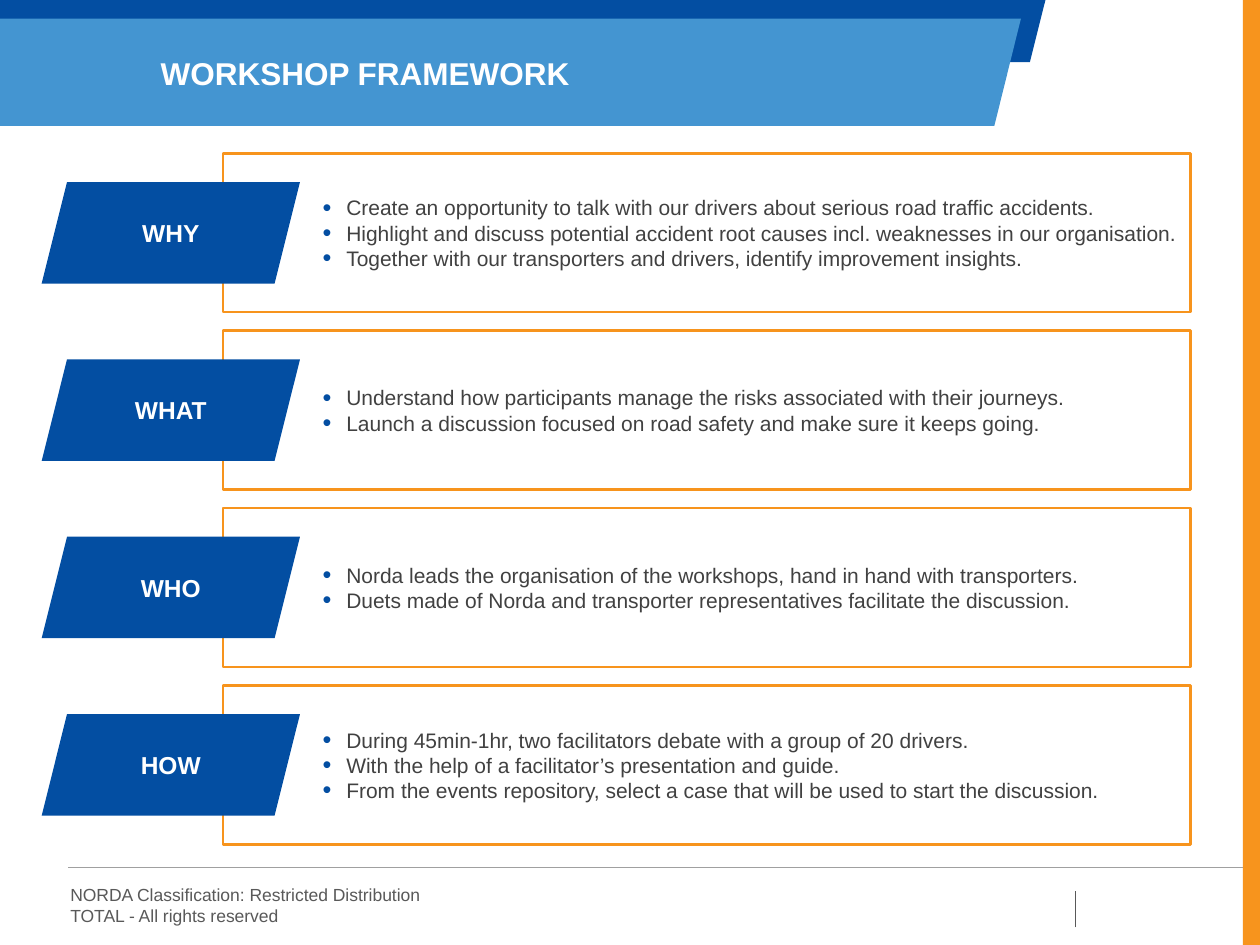
"""Build the workshop framework slide."""
import pptx
import pptx.dml.color
import pptx.enum.shapes
import pptx.enum.text
import pptx.util
from lxml import etree

Pt = pptx.util.Pt
SHAPES = pptx.enum.shapes.MSO_SHAPE
ANCHORS = pptx.enum.text.MSO_ANCHOR
ALIGNMENTS = pptx.enum.text.PP_ALIGN

TITLE = "WORKSHOP FRAMEWORK"
SECTIONS = [
    ("WHY", [
        "Create an opportunity to talk with our drivers about serious road traffic accidents.",
        "Highlight and discuss potential accident root causes incl. weaknesses in our organisation.",
        "Together with our transporters and drivers, identify improvement insights.",
    ]),
    ("WHAT", [
        "Understand how participants manage the risks associated with their journeys.",
        "Launch a discussion focused on road safety and make sure it keeps going.",
    ]),
    ("WHO", [
        "Norda leads the organisation of the workshops, hand in hand with transporters.",
        "Duets made of Norda and transporter representatives facilitate the discussion.",
    ]),
    ("HOW", [
        "During 45min-1hr, two facilitators debate with a group of 20 drivers.",
        "With the help of a facilitator’s presentation and guide.",
        "From the events repository, select a case that will be used to start the discussion.",
    ]),
]
FOOTER = ["NORDA Classification: Restricted Distribution", "TOTAL - All rights reserved"]

BLUE, SKY, ORANGE, WHITE = "034EA2", "4495D1", "F7941D", "FFFFFF"
BODY, GREY, RULE = "414141", "595959", "A0A0A0"
BANNERS = [
    (BLUE, [(0, 0), (597.4, 0), (588.5, 35.5), (0, 35.5)]),
    (SKY, [(0, 10.6), (583.4, 10.6), (568.2, 72), (0, 72)]),
]
RULES = [(RULE, (38.9, 495.8, 710.3, 495.8)), (GREY, (614.5, 530, 614.5, 509))]
ROW_TOP, ROW_PITCH, ROW_HEIGHT, TAG_HEIGHT = 87.7, 101.35, 90.7, 58


def color(value):
    return pptx.dml.color.RGBColor.from_string(value)


def paint(shape, fill=None, line=None, width=1.5):
    shape.shadow.inherit = False
    if fill:
        shape.fill.solid()
        shape.fill.fore_color.rgb = color(fill)
    else:
        shape.fill.background()
    if line:
        shape.line.color.rgb = color(line)
        shape.line.width = Pt(width)
    else:
        shape.line.fill.background()


def add_block(page, kind, area, fill=None, line=None):
    shape = page.shapes.add_shape(kind, *map(Pt, area))
    paint(shape, fill, line)
    return shape


def add_bullet(para):
    properties = para._p.get_or_add_pPr()
    properties.set("marL", str(Pt(13.5)))
    properties.set("indent", str(-Pt(13.5)))
    namespace = "{http://schemas.openxmlformats.org/drawingml/2006/main}"
    bullet_color = etree.SubElement(properties, namespace + "buClr")
    etree.SubElement(bullet_color, namespace + "srgbClr", val=BLUE)
    etree.SubElement(properties, namespace + "buSzPct", val="120000")
    etree.SubElement(properties, namespace + "buFont", typeface="Arial")
    etree.SubElement(properties, namespace + "buChar", char="•")


def write(shape, lines, size, ink, bold=False, align=ALIGNMENTS.LEFT,
          anchor=ANCHORS.MIDDLE, insets=(7.2, 3.6, 7.2, 3.6), bullets=False):
    frame = shape.text_frame
    frame.word_wrap = True
    frame.auto_size = pptx.enum.text.MSO_AUTO_SIZE.NONE
    frame.vertical_anchor = anchor
    (frame.margin_left, frame.margin_top,
     frame.margin_right, frame.margin_bottom) = map(Pt, insets)
    frame.text = "\n".join(lines)
    for para in frame.paragraphs:
        para.alignment = align
        if bullets:
            add_bullet(para)
        para.font.name = "Arial"
        para.font.size = Pt(size)
        para.font.bold = bold
        para.font.color.rgb = color(ink)


def add_rule(page, ink, ends):
    rule = page.shapes.add_connector(
        pptx.enum.shapes.MSO_CONNECTOR.STRAIGHT, *map(Pt, ends))
    rule.line.color.rgb = color(ink)
    rule.line.width = Pt(0.75)
    properties = rule._element.spPr
    etree.SubElement(
        properties, "{http://schemas.openxmlformats.org/drawingml/2006/main}effectLst")


def add_banner(page, fill, points):
    corners = [(Pt(x), Pt(y)) for x, y in points]
    builder = page.shapes.build_freeform(*corners[0])
    builder.add_line_segments(corners[1:], close=True)
    paint(builder.convert_to_shape(), fill)


def add_title(page):
    title = page.shapes.title
    title.left, title.top, title.width, title.height = map(Pt, (91.8, 31, 432, 21.6))
    write(title, [TITLE], 18, WHITE, bold=True, anchor=ANCHORS.TOP, insets=(0, 0, 0, 0))
    title._element.getparent().append(title._element)


def add_section(page, top, label, points):
    box = add_block(page, SHAPES.RECTANGLE, (127.4, top, 553, ROW_HEIGHT), line=ORANGE)
    write(box, points, 12, BODY, insets=(57, 3.6, 0, 3.6), bullets=True)
    tag_top = top + (ROW_HEIGHT - TAG_HEIGHT) / 2
    tag = add_block(page, SHAPES.PARALLELOGRAM, (23.8, tag_top, 147.6, TAG_HEIGHT), BLUE)
    write(tag, [label], 14, WHITE, bold=True, align=ALIGNMENTS.CENTER)


def main():
    deck = pptx.Presentation()
    deck.slide_width, deck.slide_height = Pt(720), Pt(540)
    page = deck.slides.add_slide(deck.slide_layouts[5])
    add_block(page, SHAPES.RECTANGLE, (710.3, 0, 9.7, 540), ORANGE)
    for ink, ends in RULES:
        add_rule(page, ink, ends)
    footer = page.shapes.add_textbox(*map(Pt, (33.1, 501.8, 388, 31.7)))
    write(footer, FOOTER, 10, GREY, anchor=ANCHORS.TOP)
    for fill, points in BANNERS:
        add_banner(page, fill, points)
    add_title(page)
    for index, (label, points) in enumerate(SECTIONS):
        add_section(page, ROW_TOP + index * ROW_PITCH, label, points)
    deck.save("out.pptx")


if __name__ == "__main__":
    main()
